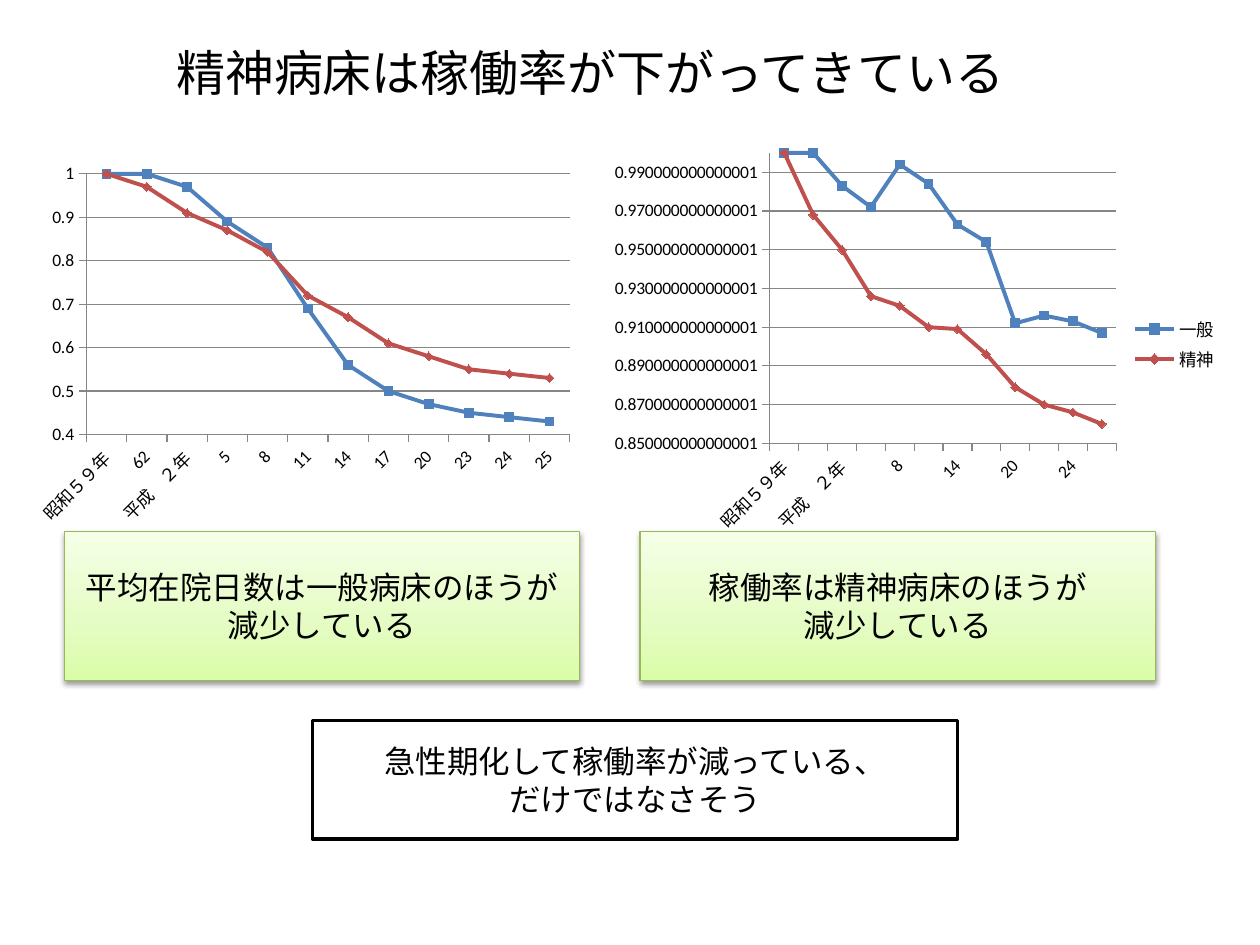
import copy

import pptx
import pptx.chart.data
import pptx.dml.color
import pptx.enum.chart
import pptx.enum.shapes
import pptx.enum.text
import pptx.oxml
import pptx.oxml.ns
import pptx.util
from pptx.util import Inches, Pt

# Content
FONT = "Calibri"
TITLE = "精神病床は稼働率が下がってきている"
YEARS = ["昭和５９年", "62", "平成　２年", "5", "8", "11", "14", "17", "20", "23", "24", "25"]
SERIES_STYLES = [("4F81BD", pptx.enum.chart.XL_MARKER_STYLE.SQUARE),
                 ("C0504D", pptx.enum.chart.XL_MARKER_STYLE.DIAMOND)]
CHARTS = [
    {"at": (0.2, 1.23, 4.41, 3), "plot": (0.11, 0.05, 0.87, 0.69),
     "minimum": 0.4, "unit": 0.1, "label_skip": None, "legend": False,
     "series": {
         "Series 1": [1, 1, 0.97, 0.89, 0.83, 0.69, 0.56, 0.5, 0.47, 0.45, 0.44, 0.43],
         "Series 2": [1, 0.97, 0.91, 0.87, 0.82, 0.72, 0.67, 0.61, 0.58, 0.55, 0.54, 0.53]}},
    {"at": (4.76, 1.15, 5, 3.16), "plot": (0.27, 0.02, 0.55, 0.73),
     "minimum": 0.850000000000001, "unit": 0.02, "label_skip": 2, "legend": True,
     "series": {
         "一般": [1, 1, 0.983, 0.972, 0.994, 0.984, 0.963, 0.954, 0.912, 0.916, 0.913, 0.907],
         "精神": [1, 0.968, 0.95, 0.926, 0.921, 0.91, 0.909, 0.896, 0.879, 0.87, 0.866, 0.86]}},
]
FINDINGS = [(0.51, ["平均在院日数は一般病床のほうが減少している"]),
            (5.08, ["稼働率は精神病床のほうが", "減少している"])]
CONCLUSION = ["急性期化して稼働率が減っている、", "だけではなさそう"]
GRADIENT = [(0, "DAFDA7"), (0.35, "E4FCC2"), (1, "F5FFE7")]
SHADOW = """<a:effectLst %s><a:outerShdw blurRad="39370" dist="20320" dir="5400000"
rotWithShape="0"><a:srgbClr val="000000"><a:alpha val="38000"/></a:srgbClr>
</a:outerShdw></a:effectLst>""" % pptx.oxml.ns.nsdecls("a")


def color(value):
    return pptx.dml.color.RGBColor.from_string(value)


def set_font(font, size):
    font.name, font.size = FONT, Pt(size)
    font.color.rgb = color("000000")


def set_line(line, value, width):
    line.color.rgb = color(value)
    line.width = Pt(width)


def write(box, lines, size, alignment):
    frame = box.text_frame
    frame.word_wrap = True
    frame.text = "\n".join(lines)
    for paragraph in frame.paragraphs:
        paragraph.alignment = alignment
        set_font(paragraph.font, size)


def add_box(page, at, lines, line_color, line_width):
    box = page.shapes.add_shape(pptx.enum.shapes.MSO_SHAPE.RECTANGLE, *map(Inches, at))
    box.shadow.inherit = False
    set_line(box.line, line_color, line_width)
    write(box, lines, 18, pptx.enum.text.PP_ALIGN.CENTER)
    box.text_frame.vertical_anchor = pptx.enum.text.MSO_ANCHOR.MIDDLE
    return box


def fill_gradient(box):
    box.fill.gradient()
    box.fill.gradient_angle = 90
    stop_list = box._element.spPr.find(".//" + pptx.oxml.ns.qn("a:gsLst"))
    stop_list.insert(1, copy.deepcopy(stop_list[0]))
    for stop, (position, value) in zip(box.fill.gradient_stops, GRADIENT):
        stop.position = position
        stop.color.rgb = color(value)


def set_plot_layout(chart, plot):
    parts = "".join(f'<c:{name} val="{value}"/>' for name, value in zip("xywh", plot))
    layout = pptx.oxml.parse_xml(
        f'<c:layout {pptx.oxml.ns.nsdecls("c")}><c:manualLayout>'
        '<c:layoutTarget val="inner"/><c:xMode val="edge"/><c:yMode val="edge"/>'
        f'{parts}</c:manualLayout></c:layout>')
    area = chart._chartSpace.chart.plotArea
    for old in area.findall(pptx.oxml.ns.qn("c:layout")):
        area.remove(old)
    area.insert(0, layout)


def style_axes(chart, content):
    values, years = chart.value_axis, chart.category_axis
    values.minimum_scale, values.maximum_scale = content["minimum"], 1
    values.major_unit = content["unit"]
    values.has_major_gridlines = True
    set_line(values.major_gridlines.format.line, "868686", 0.75)
    values.tick_labels.number_format = "General"
    values.tick_labels.number_format_is_linked = False
    for axis in (values, years):
        axis.major_tick_mark = pptx.enum.chart.XL_TICK_MARK.OUTSIDE
        set_line(axis.format.line, "868686", 0.75)
        set_font(axis.tick_labels.font, 10)
    # Slanted year labels
    element = years._element
    element.find(".//" + pptx.oxml.ns.qn("a:bodyPr")).set("rot", "-2700000")
    if content["label_skip"]:
        skip = pptx.oxml.parse_xml(
            f'<c:tickLblSkip {pptx.oxml.ns.nsdecls("c")} val="{content["label_skip"]}"/>')
        element.find(pptx.oxml.ns.qn("c:noMultiLvlLbl")).addprevious(skip)


def add_line_chart(page, content):
    data = pptx.chart.data.CategoryChartData()
    data.categories = YEARS
    for name, values in content["series"].items():
        data.add_series(name, values)
    chart = page.shapes.add_chart(pptx.enum.chart.XL_CHART_TYPE.LINE_MARKERS,
                                  *map(Inches, content["at"]), data).chart
    set_font(chart.font, 10)
    chart.has_title = False
    chart.has_legend = content["legend"]
    if chart.has_legend:
        chart.legend.position = pptx.enum.chart.XL_LEGEND_POSITION.RIGHT
        chart.legend.include_in_layout = False
        set_font(chart.legend.font, 10)
    chart.plots[0].vary_by_categories = False
    for series, (value, marker) in zip(chart.plots[0].series, SERIES_STYLES):
        series.smooth = False
        set_line(series.format.line, value, 2.25)
        series.marker.style, series.marker.size = marker, 5
        series.marker.format.fill.solid()
        series.marker.format.fill.fore_color.rgb = color(value)
        set_line(series.marker.format.line, value, 0.75)
    style_axes(chart, content)
    set_plot_layout(chart, content["plot"])


def main():
    deck = pptx.Presentation()
    deck.slide_width, deck.slide_height = Inches(10), Inches(7.5)
    page = deck.slides.add_slide(deck.slide_layouts[6])

    # Charts
    for content in CHARTS:
        add_line_chart(page, content)

    # Finding under each chart
    for left, lines in FINDINGS:
        box = add_box(page, (left, 4.22, 4.09, 1.18), lines, "98B955", 0.75)
        fill_gradient(box)
        properties = box._element.spPr
        properties.replace(properties.find(pptx.oxml.ns.qn("a:effectLst")),
                           pptx.oxml.parse_xml(SHADOW))

    # Conclusion
    box = add_box(page, (2.48, 5.72, 5.12, 0.94), CONCLUSION, "000000", 2)
    box.fill.solid()
    box.fill.fore_color.rgb = color("FFFFFF")

    # Title
    title = page.shapes.add_textbox(*map(Inches, (1.3, 0.29, 7.72, 0.57)))
    write(title, [TITLE], 28, pptx.enum.text.PP_ALIGN.LEFT)

    deck.save("out.pptx")


if __name__ == "__main__":
    main()
